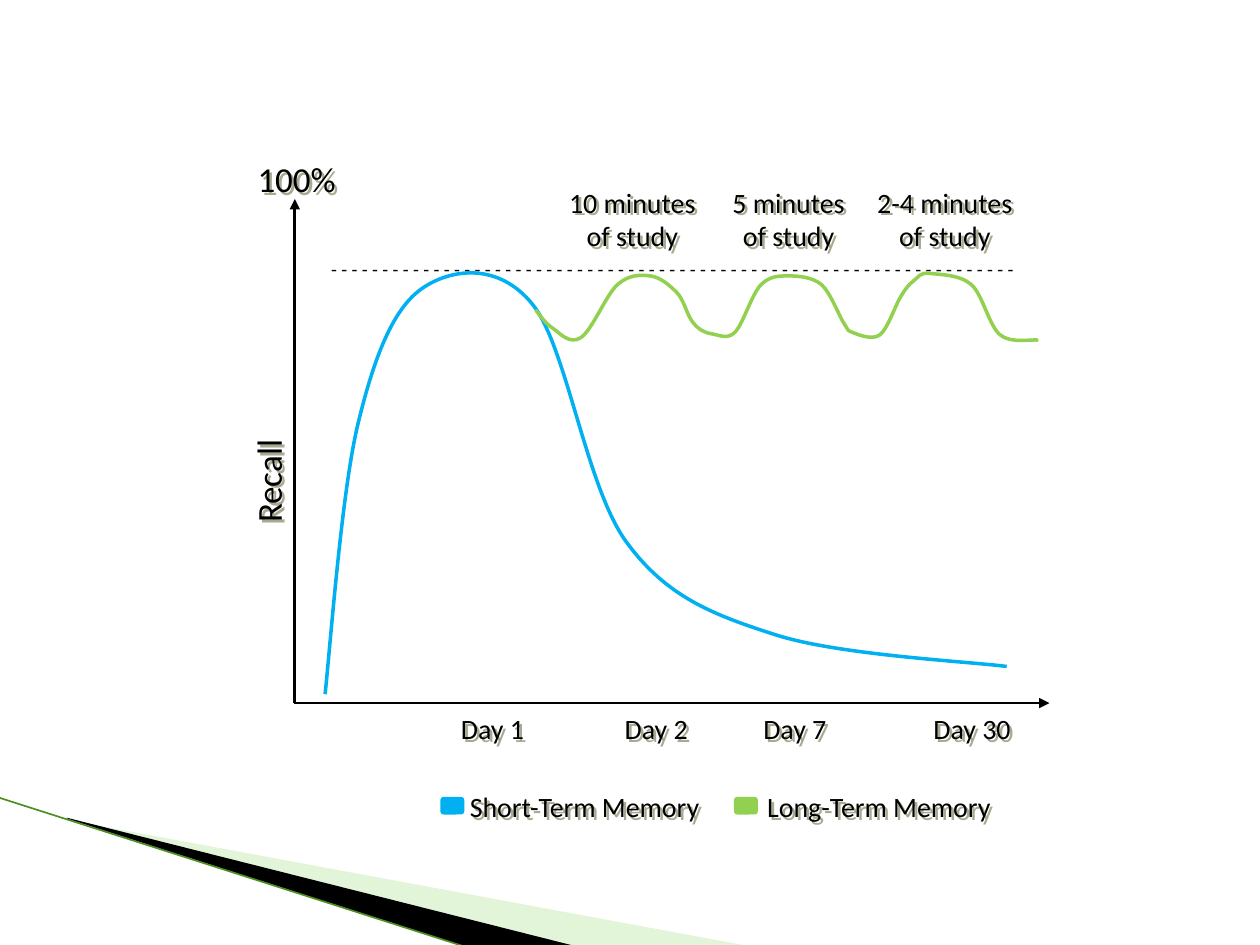
from lxml.etree import SubElement
from pptx import Presentation
from pptx.dml.color import RGBColor
from pptx.enum.shapes import MSO_CONNECTOR, MSO_SHAPE
from pptx.enum.text import MSO_ANCHOR, PP_ALIGN
from pptx.oxml.ns import qn
from pptx.util import Pt

PX = 9144
FONT = "Calibri"
BLACK = RGBColor(0, 0, 0)
BLUE = RGBColor(0x00, 0xB0, 0xF0)
GREEN = RGBColor(0x92, 0xD0, 0x50)
PALE = RGBColor(0xB8, 0xE7, 0xA1)
MOSS = RGBColor(0x4E, 0x8F, 0x22)
SHADE = RGBColor(0xA9, 0xA8, 0x90)

deck = Presentation()
deck.slide_width, deck.slide_height = 1000 * PX, 750 * PX
slide = deck.slides.add_slide(deck.slide_layouts[6])
shapes = slide.shapes


def add_text(text, box, size=16, align=PP_ALIGN.LEFT, tabs=(), stop="l",
             anchor=MSO_ANCHOR.TOP, turn=0, shade=True):
    label = shapes.add_textbox(*[v * PX for v in box])
    label.rotation = turn
    frame = label.text_frame
    frame.word_wrap = True
    frame.vertical_anchor = anchor
    frame.text = text
    for para in frame.paragraphs:
        para.alignment = align
        if tabs:
            stops = SubElement(para._p.get_or_add_pPr(), qn("a:tabLst"))
            for tab in tabs:
                SubElement(stops, qn("a:tab"), pos=str(tab * PX), algn=stop)
        font = para.font
        font.name, font.size, font.color.rgb = FONT, Pt(size), BLACK
    if shade:
        effects = SubElement(label._element.spPr, qn("a:effectLst"))
        shadow = SubElement(effects, qn("a:outerShdw"), dist="28000",
                            dir="2700000", algn="ctr", rotWithShape="0")
        SubElement(shadow, qn("a:srgbClr"), val=str(SHADE))


def add_path(points, close):
    pen = shapes.build_freeform(*points[0], scale=PX)
    pen.add_line_segments(points[1:], close=close)
    path = pen.convert_to_shape()
    path.shadow.inherit = False
    return path


wedges = [
    ([(55, 651), (595, 751), (456, 751), (55, 650)], PALE, 40),
    ([(53, 649), (457, 751), (372, 752), (54, 650)], BLACK, 100),
]
for corners, color, alpha in wedges:
    wedge = add_path(corners, True)
    wedge.fill.solid()
    wedge.fill.fore_color.rgb = color
    wedge.line.fill.background()
    tint = wedge._element.spPr.find(qn("a:solidFill"))[0]
    SubElement(tint, qn("a:alpha"), val=str(alpha * 1000))

edge = (-1, 633, 371, 752)
recall_axis = (234, 558, 234, 158)
day_axis = (233, 558, 833, 558)
for ends, color, width, arrow in [
    (edge, MOSS, 0.95, False),
    (recall_axis, BLACK, 1.5, True),
    (day_axis, BLACK, 1.5, True),
]:
    line = shapes.add_connector(MSO_CONNECTOR.STRAIGHT, *[v * PX for v in ends])
    line.line.color.rgb = color
    line.line.width = Pt(width)
    if arrow:
        SubElement(line.line._get_or_add_ln(), qn("a:tailEnd"), type="triangle")
    SubElement(line._element.spPr, qn("a:effectLst"))

add_text("Recall", (166, 359, 96, 46), size=20, align=PP_ALIGN.CENTER, turn=270)
add_text("100%", (192, 120, 87, 39), size=20, align=PP_ALIGN.CENTER)
add_text("\tDay 1\tDay 2\tDay 7\tDay 30", (256, 560, 586, 51), tabs=(100, 230, 340, 475))
add_text("\t10 minutes\t5 minutes\t2-4 minutes\n\tof study\tof study\tof study",
         (317, 142, 625, 75), tabs=(175, 299, 423), stop="ctr")
add_text(" ".join("-" * 67), (253, 201, 599, 24), size=11,
         anchor=MSO_ANCHOR.MIDDLE, shade=False)

for left, color in ((350, BLUE), (583, GREEN)):
    key = shapes.add_shape(MSO_SHAPE.ROUNDED_RECTANGLE, left * PX, 633 * PX, 18 * PX, 13 * PX)
    key.shadow.inherit = False
    key.fill.solid()
    key.fill.fore_color.rgb = color
    key.line.color.rgb = color
    key.line.width = Pt(0.75)
add_text("\tShort-Term Memory\tLong-Term Memory", (358, 622, 525, 36), tabs=(5, 241))

short_term = [(258, 551), (284, 337), (335, 229), (423, 242), (497, 430), (616, 504), (799, 529)]
long_term = [
    (425, 246), (438, 260), (461, 268),
    (490, 226), (516, 219), (537, 232), (550, 256), (565, 265), (584, 263),
    (604, 226), (626, 219), (652, 226), (670, 257), (677, 264), (698, 266),
    (714, 237), (725, 223), (738, 217), (771, 226), (794, 266), (824, 270),
]
for knots, color in ((short_term, BLUE), (long_term, GREEN)):
    padded = [knots[0], *knots, knots[-1]]
    points = [knots[0]]
    for prev, start, end, after in zip(padded, padded[1:], padded[2:], padded[3:]):
        leave = [s + (e - p) / 6 for p, s, e in zip(prev, start, end)]
        reach = [e - (a - s) / 6 for s, e, a in zip(start, end, after)]
        points += [leave, reach, end]
    curve = add_path(points, False)
    curve.fill.background()
    curve.line.color.rgb = color
    curve.line.width = Pt(2)
    track = next(curve._element.iter(qn("a:path")))
    steps = track.findall(qn("a:lnTo"))
    for i in range(0, len(steps), 3):
        bend = SubElement(track, qn("a:cubicBezTo"))
        for step in steps[i:i + 3]:
            bend.append(step[0])
            track.remove(step)

deck.save("out.pptx")
